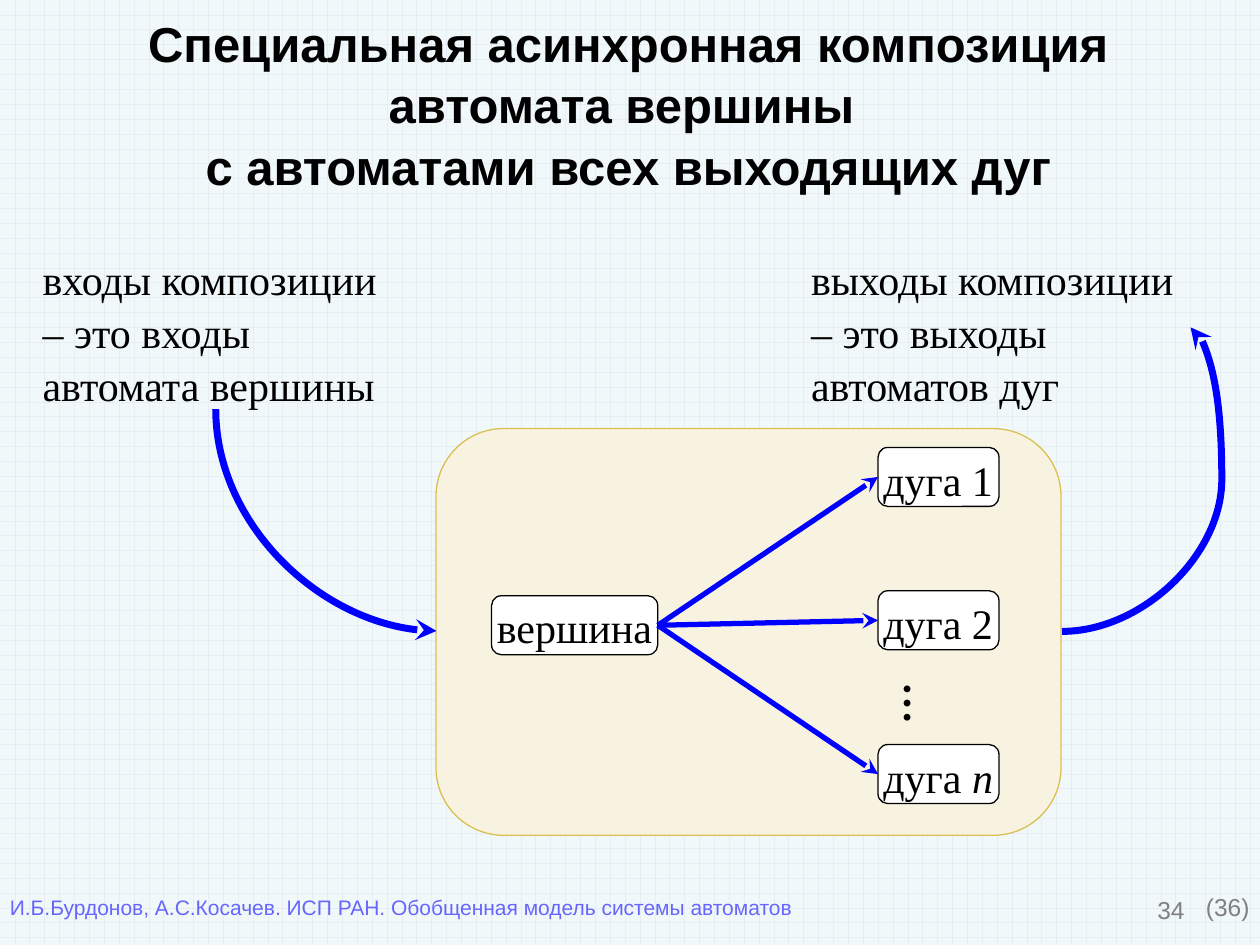
from lxml.etree import SubElement
from pptx import Presentation
from pptx.dml.color import RGBColor
from pptx.enum.dml import MSO_PATTERN
from pptx.enum.shapes import MSO_CONNECTOR, MSO_SHAPE
from pptx.enum.text import MSO_ANCHOR, MSO_AUTO_SIZE, PP_ALIGN
from pptx.oxml.ns import qn
from pptx.util import Cm, Pt

BLACK = RGBColor(0x00, 0x00, 0x00)
WHITE = RGBColor(0xFF, 0xFF, 0xFF)
BLUE = RGBColor(0x00, 0x00, 0xFF)
GRAY = RGBColor(0x80, 0x80, 0x80)
VIOLET = RGBColor(0x66, 0x66, 0xFF)
CREAM = RGBColor(0xF8, 0xF3, 0xE0)
GOLD = RGBColor(0xDA, 0xC0, 0x52)
PAPER = RGBColor(0xF1, 0xF8, 0xF9)
GRID = RGBColor(0xE7, 0xED, 0xF5)


def set_text(sp, lines, size, color=BLACK, font="Times New Roman", bold=False,
             align=PP_ALIGN.LEFT, inset=(0.25, 0.13), wrap=False, spacing=1.0):
    tf = sp.text_frame
    tf.text = "\n".join(lines)
    tf.word_wrap = wrap
    tf.vertical_anchor = MSO_ANCHOR.TOP
    tf.margin_left = tf.margin_right = Cm(inset[0])
    tf.margin_top = tf.margin_bottom = Cm(inset[1])
    for p in tf.paragraphs:
        p.alignment = align
        p.line_spacing = spacing
        for r in p.runs:
            r.font.name, r.font.size, r.font.bold = font, Pt(size), bold
            r.font.color.rgb = color
    return tf


def add_arrow(kind, x1, y1, x2, y2, width):
    c = s.shapes.add_connector(kind, Cm(x1), Cm(y1), Cm(x2), Cm(y2))
    c.line.color.rgb = BLUE
    c.line.width = Pt(width)
    SubElement(c.line._get_or_add_ln(), qn("a:tailEnd"), type="stealth")
    SubElement(c.element.spPr, qn("a:effectLst"))
    return c


prs = Presentation()
prs.slide_width, prs.slide_height = Cm(25.4), Cm(19.05)
s = prs.slides.add_slide(prs.slide_layouts[6])

# Background
bg = s.background.fill
bg.patterned()
bg.pattern = MSO_PATTERN.HORIZONTAL_BRICK
bg.fore_color.rgb = GRID
bg.back_color.rgb = PAPER

# Title
sp = s.shapes.add_textbox(Cm(0.51), Cm(0.03), Cm(24.31), Cm(4.09))
tf = set_text(sp, ["Специальная асинхронная композиция",
                   "автомата вершины ",
                   "с автоматами всех выходящих дуг"],
              28, font="Arial", bold=True, align=PP_ALIGN.CENTER,
              inset=(0.25, 0.25), wrap=True, spacing=1.05)
tf.vertical_anchor = MSO_ANCHOR.MIDDLE
tf.auto_size = MSO_AUTO_SIZE.SHAPE_TO_FIT_TEXT

# Footer and page number
sp = s.shapes.add_textbox(Cm(0.2), Cm(18.03), Cm(15.93), Cm(0.51))
set_text(sp, ["И.Б.Бурдонов, А.С.Косачев. ИСП РАН. Обобщенная модель системы автоматов"],
         12, VIOLET, "Arial", inset=(0, 0))
sp = s.shapes.add_textbox(Cm(18.21), Cm(17.91), Cm(5.92), Cm(1.32))
set_text(sp, ["34"], 14, GRAY, "Arial", align=PP_ALIGN.RIGHT, wrap=True)
sp = s.shapes.add_textbox(Cm(24.31), Cm(17.98), Cm(0.89), Cm(0.58))
set_text(sp, ["(36)"], 14, GRAY, "Arial", inset=(0, 0))

# Composition frame
sp = s.shapes.add_shape(MSO_SHAPE.ROUNDED_RECTANGLE, Cm(8.79), Cm(8.64), Cm(12.6), Cm(8.2))
sp.shadow.inherit = False
sp.fill.solid()
sp.fill.fore_color.rgb = CREAM
sp.line.color.rgb = GOLD
sp.line.width = Pt(0.75)

# Vertex and arc automata
boxes = []
for text, x, y, w in [("вершина", 9.91, 12.01, 3.35),
                      ("дуга 1", 17.7, 9.02, 2.44),
                      ("дуга 2", 17.7, 11.91, 2.44),
                      ("дуга ", 17.7, 15.01, 2.44)]:
    sp = s.shapes.add_shape(MSO_SHAPE.ROUNDED_RECTANGLE, Cm(x), Cm(y), Cm(w), Cm(1.19))
    sp.shadow.inherit = False
    sp.fill.solid()
    sp.fill.fore_color.rgb = WHITE
    sp.line.color.rgb = BLACK
    sp.line.width = Pt(0.75)
    set_text(sp, [text], 24, inset=(0.05, 0.03), spacing=1.05)
    boxes.append(sp)
vertex, *arcs = boxes
vertex.text_frame.vertical_anchor = MSO_ANCHOR.MIDDLE

# Italic index of the last arc
r = arcs[-1].text_frame.paragraphs[0].add_run()
r.text = "n"
r.font.name, r.font.size, r.font.italic = "Times New Roman", Pt(24), True
r.font.color.rgb = BLACK

# Vertical ellipsis between the arcs
sp = s.shapes.add_textbox(Cm(17.91), Cm(13.72), Cm(1.22), Cm(1.02))
tf = set_text(sp, ["…"], 24, bold=True, inset=(0.05, 0.03))
tf._txBody.bodyPr.set("vert", "vert")

# Arrows from the vertex to the arcs
for arc in arcs:
    c = add_arrow(MSO_CONNECTOR.STRAIGHT, 13.26, 12.6, 17.7, 12.6, 3)
    c.begin_connect(vertex, 3)
    c.end_connect(arc, 1)

# Input and output captions
for lines, x, w in [(["входы композиции", "– это входы", "автомата вершины"], 0.61, 7.49),
                    (["выходы композиции", "– это выходы", "автоматов дуг"], 16.1, 7.9)]:
    sp = s.shapes.add_textbox(Cm(x), Cm(4.93), Cm(w), Cm(3.33))
    set_text(sp, lines, 24, spacing=1.05)

# Curved input arrow: a quarter bend turned to start downwards
c = add_arrow(MSO_CONNECTOR.CURVE, 8.81, 8.26, 4.34, 12.71, 4)
c.element.spPr.find(qn("a:xfrm")).set("rot", "16200000")
c.element.spPr.find(qn("a:prstGeom")).set("prst", "curvedConnector2")

# Curved output arrow: the bend reaches beyond its end
c = add_arrow(MSO_CONNECTOR.CURVE, 21.41, 12.73, 24, 6.6, 4)
geom = c.element.spPr.find(qn("a:prstGeom"))
SubElement(geom.find(qn("a:avLst")), qn("a:gd"), name="adj1", fmla="val 124400")

prs.save("out.pptx")
